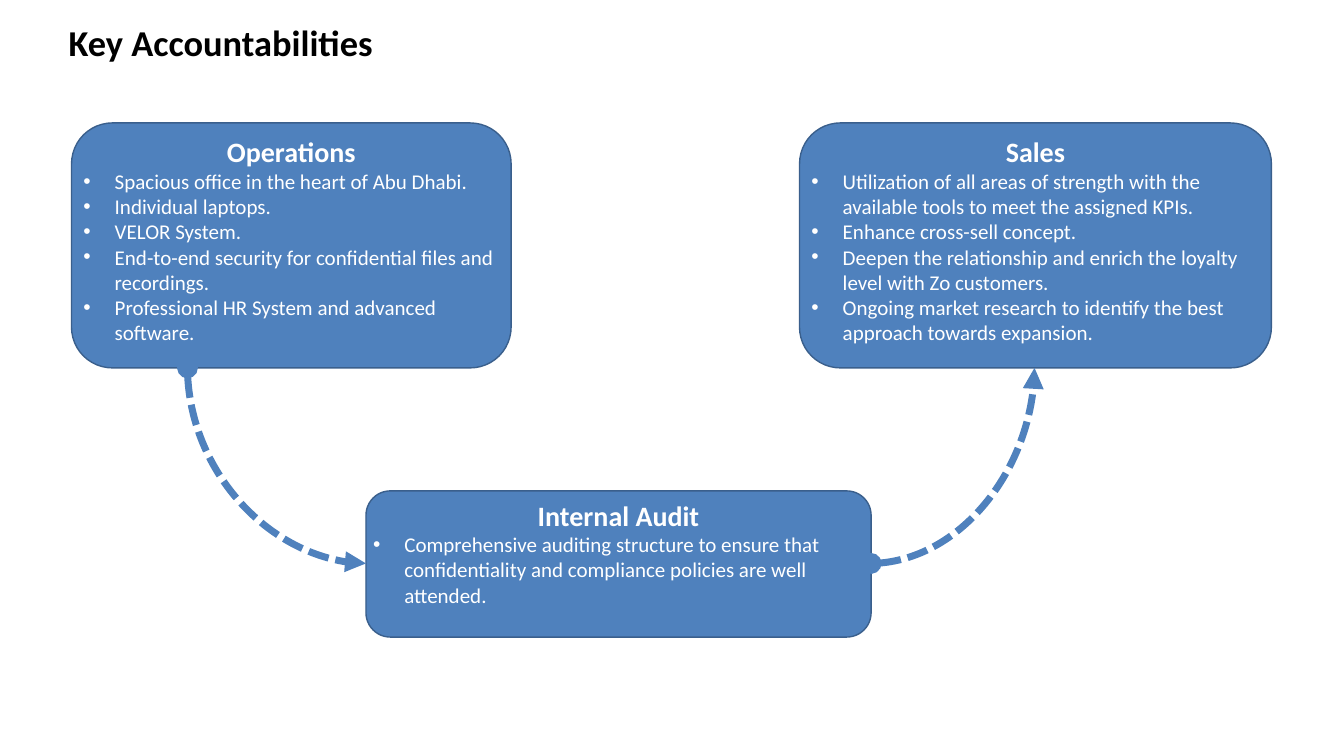
from dataclasses import dataclass

import lxml.etree
import pptx
import pptx.dml.color
import pptx.enum.dml
import pptx.enum.shapes
import pptx.enum.text
import pptx.oxml.ns
import pptx.util

Inches = pptx.util.Inches
Pt = pptx.util.Pt
Align = pptx.enum.text.PP_ALIGN
Anchor = pptx.enum.text.MSO_ANCHOR

BLACK = pptx.dml.color.RGBColor(0x00, 0x00, 0x00)
WHITE = pptx.dml.color.RGBColor(0xFF, 0xFF, 0xFF)
BLUE = pptx.dml.color.RGBColor(0x4F, 0x81, 0xBD)
DARK_BLUE = pptx.dml.color.RGBColor(0x3A, 0x5F, 0x8C)
FONT = "Calibri"
BULLET_INDENT = Inches(0.31)


@dataclass(frozen=True)
class Department:
    name: str
    left: float
    top: float
    width: float
    height: float
    duties: tuple[str, ...]


@dataclass(frozen=True)
class Arrow:
    """A quarter curve; it leaves its start either downwards or sideways."""
    start: tuple[float, float]
    end: tuple[float, float]
    leaves_downwards: bool


DEPARTMENTS = (
    Department("Operations", 0.71, 1.22, 4.36, 2.43, (
        "Spacious office in the heart of Abu Dhabi.",
        "Individual laptops.",
        "VELOR System.",
        "End-to-end security for confidential files and recordings.",
        "Professional HR System and advanced software.",
    )),
    Department("Internal Audit", 3.63, 4.87, 5.01, 1.45, (
        "Comprehensive auditing structure to ensure that confidentiality "
        "and compliance policies are well attended.",
    )),
    Department("Sales", 7.93, 1.22, 4.68, 2.43, (
        "Utilization of all areas of strength with the available tools "
        "to meet the assigned KPIs.",
        "Enhance cross-sell concept.",
        "Deepen the relationship and enrich the loyalty level with Zo customers.",
        "Ongoing market research to identify the best approach towards expansion.",
    )),
)

ARROWS = (
    Arrow((1.86, 3.65), (3.63, 5.59), leaves_downwards=True),
    Arrow((8.64, 5.59), (10.26, 3.65), leaves_downwards=False),
)


def add_child(parent, tag: str, **attributes: str):
    return lxml.etree.SubElement(parent, pptx.oxml.ns.qn(tag), **attributes)


def write_paragraph(paragraph, text: str, *, size: float, color=WHITE,
                    bold: bool = False, align=Align.LEFT, bullet: bool = False,
                    line_spacing: float = 1.0) -> None:
    paragraph.alignment = align
    paragraph.line_spacing = line_spacing
    if bullet:
        properties = paragraph._p.get_or_add_pPr()
        properties.set("marL", str(BULLET_INDENT))
        properties.set("indent", str(-BULLET_INDENT))
        add_child(properties, "a:buFont", typeface="Arial")
        add_child(properties, "a:buChar", char="•")
    run = paragraph.add_run()
    run.text = text
    run.font.name = FONT
    run.font.size = Pt(size)
    run.font.bold = bold
    run.font.color.rgb = color


def add_title(slide, text: str) -> None:
    title = slide.shapes.title
    title.left, title.top = Inches(0.58), Inches(0.11)
    title.width, title.height = Inches(11.11), Inches(0.66)
    title.text_frame.vertical_anchor = Anchor.MIDDLE
    write_paragraph(title.text_frame.paragraphs[0], text, size=26, color=BLACK,
                    bold=True, line_spacing=0.9)


def add_department(slide, department: Department) -> None:
    shape = slide.shapes.add_shape(
        pptx.enum.shapes.MSO_SHAPE.ROUNDED_RECTANGLE,
        Inches(department.left), Inches(department.top),
        Inches(department.width), Inches(department.height))
    shape.shadow.inherit = False
    shape.fill.solid()
    shape.fill.fore_color.rgb = BLUE
    shape.line.color.rgb = DARK_BLUE
    shape.line.width = Pt(1)
    frame = shape.text_frame
    frame.word_wrap = True
    frame.vertical_anchor = Anchor.TOP
    frame.margin_left = frame.margin_right = 0
    frame.margin_top = frame.margin_bottom = 0
    write_paragraph(frame.paragraphs[0], department.name, size=20, bold=True,
                    align=Align.CENTER)
    for duty in department.duties:
        write_paragraph(frame.add_paragraph(), duty, size=15, bullet=True)


def add_arrow(slide, arrow: Arrow) -> None:
    (start_x, start_y), (end_x, end_y) = arrow.start, arrow.end
    if arrow.leaves_downwards:
        # Quarter-turn the frame about its centre; the turn restores both ends.
        center_x, center_y = (start_x + end_x) / 2, (start_y + end_y) / 2
        half_width, half_height = (end_y - start_y) / 2, (end_x - start_x) / 2
        start_x, end_x = center_x + half_width, center_x - half_width
        start_y, end_y = center_y - half_height, center_y + half_height
    connector = slide.shapes.add_connector(
        pptx.enum.shapes.MSO_CONNECTOR.CURVE,
        Inches(start_x), Inches(start_y), Inches(end_x), Inches(end_y))
    connector.line.color.rgb = BLUE
    connector.line.width = Pt(5)
    connector.line.dash_style = pptx.enum.dml.MSO_LINE.SQUARE_DOT
    properties = connector._element.spPr
    properties.find(pptx.oxml.ns.qn("a:prstGeom")).set("prst", "curvedConnector2")
    if arrow.leaves_downwards:
        properties.find(pptx.oxml.ns.qn("a:xfrm")).set("rot", str(270 * 60000))
    line = properties.find(pptx.oxml.ns.qn("a:ln"))
    add_child(line, "a:headEnd", type="oval")
    add_child(line, "a:tailEnd", type="triangle")
    add_child(properties, "a:effectLst")


def main() -> None:
    presentation = pptx.Presentation()
    presentation.slide_width = Inches(13.33)
    presentation.slide_height = Inches(7.5)
    slide = presentation.slides.add_slide(presentation.slide_layouts[5])
    add_title(slide, "Key Accountabilities")
    for department in DEPARTMENTS:
        add_department(slide, department)
    for arrow in ARROWS:
        add_arrow(slide, arrow)
    presentation.save("out.pptx")


if __name__ == "__main__":
    main()
